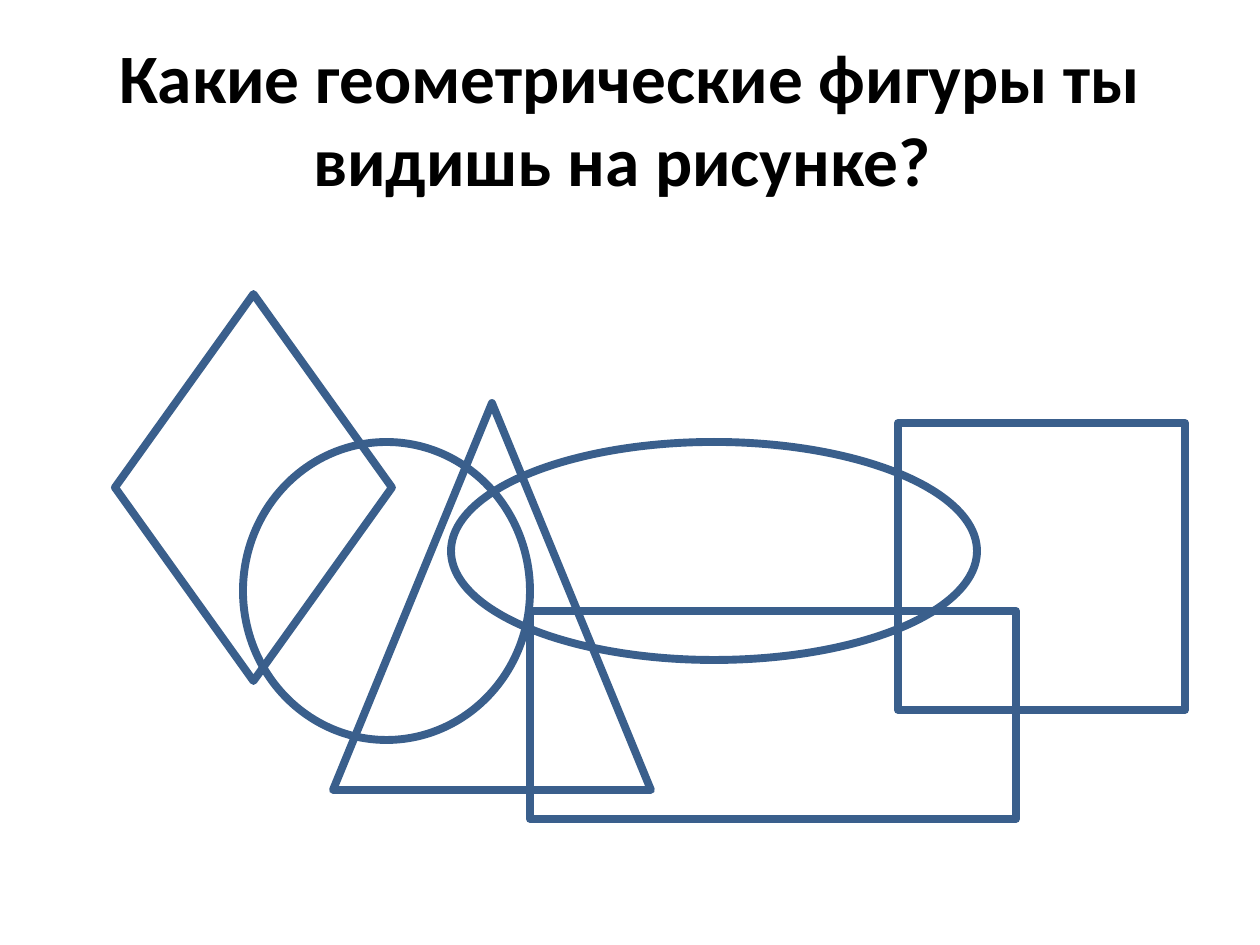
from pptx import Presentation
from pptx.dml.color import RGBColor
from pptx.enum.shapes import MSO_SHAPE
from pptx.enum.text import MSO_ANCHOR, PP_ALIGN
from pptx.util import Emu, Pt

PX_PER_INCH = 126
BLANK_LAYOUT = 6
CENTER = PP_ALIGN.CENTER
MIDDLE = MSO_ANCHOR.MIDDLE
TRIANGLE = MSO_SHAPE.ISOSCELES_TRIANGLE
RECTANGLE = MSO_SHAPE.RECTANGLE
OVAL = MSO_SHAPE.OVAL
DIAMOND = MSO_SHAPE.DIAMOND

OUTLINE = "3A5F8C"
BLACK = "000000"

# kind, left, top, width, height, from back to front
FIGURES = [
    (TRIANGLE, 333, 403, 318, 387),
    (RECTANGLE, 530, 611, 486, 208),
    (OVAL, 243, 442, 287, 298),
    (RECTANGLE, 898, 423, 287, 287),
    (OVAL, 451, 442, 526, 218),
    (DIAMOND, 115, 294, 277, 387),
]


def px(length):
    return Emu(round(length * 914400 / PX_PER_INCH))


def color(hex_string):
    return RGBColor.from_string(hex_string)


def add_text(slide, text, box, *, size, font="Calibri", fill=BLACK,
             bold=False, align=CENTER, anchor=MIDDLE):
    text_box = slide.shapes.add_textbox(*map(px, box))
    frame = text_box.text_frame
    frame.word_wrap = True
    frame.vertical_anchor = anchor
    paragraph = frame.paragraphs[0]
    paragraph.alignment = align
    run = paragraph.add_run()
    run.text = text
    run.font.name = font
    run.font.size = Pt(size)
    run.font.bold = bold
    run.font.color.rgb = color(fill)


def add_figure(slide, kind, *box):
    """Add an unfilled geometric outline."""
    shape = slide.shapes.add_shape(kind, *map(px, box))
    shape.shadow.inherit = False
    shape.fill.background()
    shape.line.color.rgb = color(OUTLINE)
    shape.line.width = Pt(4.5)


def main():
    presentation = Presentation()
    presentation.slide_width = px(1260)
    presentation.slide_height = px(945)
    slide = presentation.slides.add_slide(
        presentation.slide_layouts[BLANK_LAYOUT])
    add_text(slide, "Какие геометрические фигуры ты видишь на рисунке? ",
             (63, 38, 1134, 158), size=39.6, bold=True)
    for figure in FIGURES:
        add_figure(slide, *figure)
    presentation.save("out.pptx")


if __name__ == "__main__":
    main()
